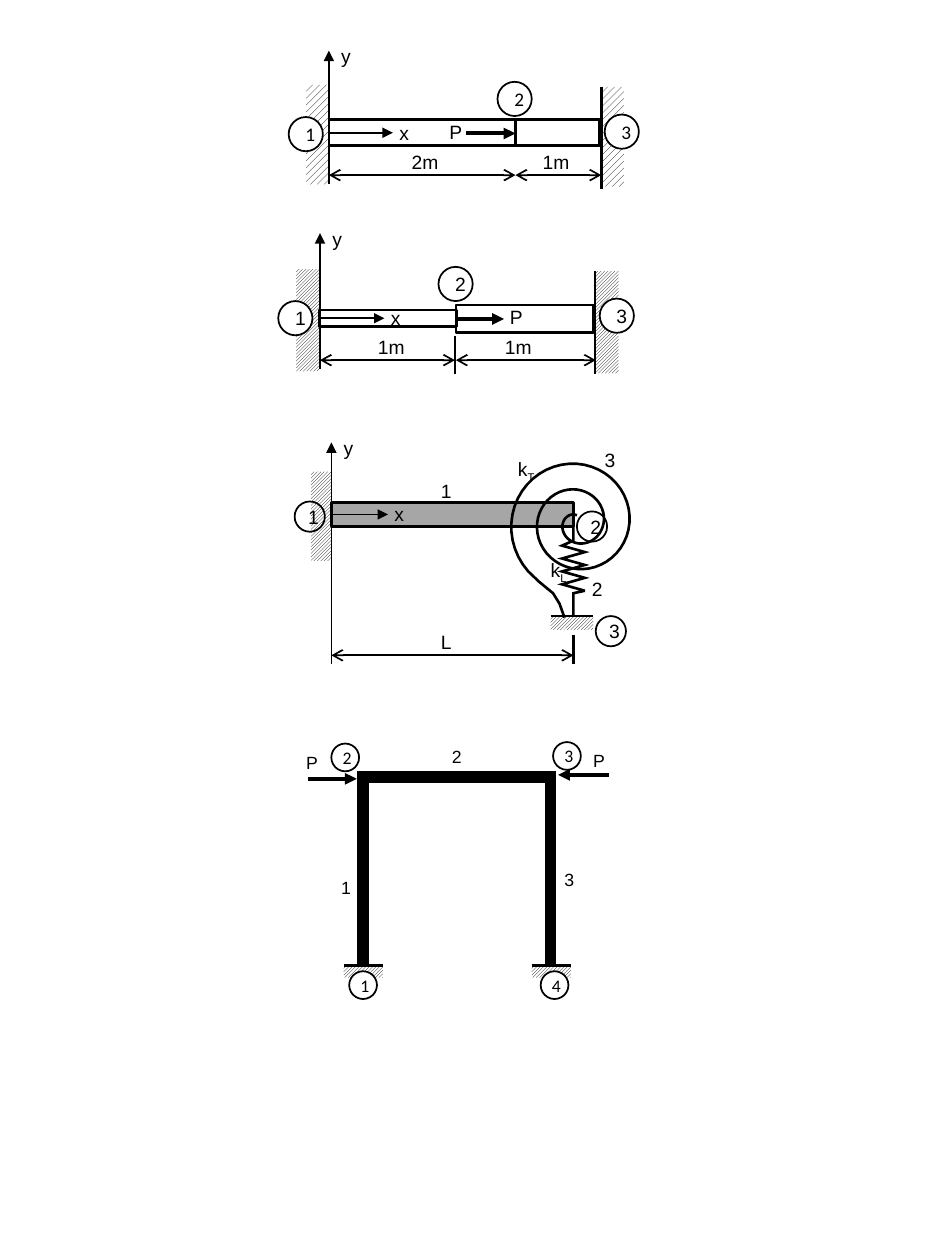
import math

from lxml import etree
from pptx import Presentation, util as u
from pptx.dml.color import RGBColor
from pptx.enum import dml, shapes as kinds, text
from pptx.oxml import ns

BLACK = RGBColor(0, 0, 0)
WHITE = RGBColor(255, 255, 255)
GRAY = RGBColor(166, 166, 166)
WIDE = dml.MSO_PATTERN.WIDE_UPWARD_DIAGONAL
LIGHT = dml.MSO_PATTERN.LIGHT_UPWARD_DIAGONAL

LINE_ENDS = {
    "plain": {},
    "axis": {"headEnd": "triangle"},
    "force": {"tailEnd": "triangle"},
    "dimension": {"headEnd": "arrow", "tailEnd": "arrow"},
}
LABEL_WIDTHS = {"1m": 1.07, "2m": 1.07, "kT": 0.86, "kL": 0.86}

# Lengths are in centimetres.
# axis: x, top, bottom; wall: length and thickness of its hatch
# bars: left, top, width, height, end and weight of the arrow from the left side
# spans: start, end, label, left of label; grounds: left, top, width, height, weight
# lines: x1, y1, x2, y2, weight, style; labels: text, left, top; nodes: number, left, top, fill
FIGURES = [
    {
        "pattern": WIDE, "font": "Calibri", "size": 11, "diameter": 0.69,
        "axis": (6.63, 1.02, 3.71), "wall": (2.01, 0.46), "right_wall": (12.12, 1.75, 3.81, 1.5),
        "bars": [(6.63, 2.41, 5.46, 0.53, 7.92, 1)],
        "level": 3.53, "spans": [(6.63, 10.39, "2m", 8.05), (10.39, 12.12, "1m", 10.69)],
        "lines": [(9.4, 2.69, 10.39, 2.69, 2.25, "force"), (10.39, 2.41, 10.39, 2.94, 1.5, "plain")],
        "labels": [("P", 8.81, 2.31)],
        "nodes": [(1, 5.82, 2.36, WHITE), (3, 12.19, 2.31, WHITE), (2, 10.03, 1.65, None)],
    },
    {
        "pattern": LIGHT, "font": "Arial", "size": 11, "diameter": 0.69,
        "axis": (6.45, 4.7, 7.44), "wall": (2.06, 0.48), "right_wall": (11.99, 5.46, 7.54, 1),
        "bars": [(6.43, 6.25, 2.77, 0.33, 7.75, 1), (9.19, 6.15, 2.77, 0.56, 10.16, 2.25)],
        "level": 7.26, "spans": [(6.45, 9.17, "1m", 7.37), (9.19, 12.01, "1m", 9.93)],
        "lines": [(9.17, 6.78, 9.17, 7.54, 1, "plain")],
        "labels": [("P", 10.03, 6.02)],
        "nodes": [(1, 5.61, 6.07, WHITE), (3, 12.09, 6.02, WHITE), (2, 8.84, 5.38, None)],
    },
    {
        "pattern": LIGHT, "font": "Arial", "size": 11, "diameter": 0.61,
        "axis": (6.68, 8.92, 13.39), "wall": (1.8, 0.41), "bar_fill": GRAY,
        "bars": [(6.68, 10.13, 4.88, 0.48, 7.82, 1)],
        "level": 13.21, "spans": [(6.68, 11.56, "L", 8.64)],
        "grounds": [(11.1, 12.42, 0.86, 0.28, 1)],
        "lines": [(11.56, 12.8, 11.56, 13.39, 1.5, "plain")],
        "labels": [("kT", 10.19, 9.09), ("kL", 10.85, 11.13), ("1", 8.64, 9.53),
                   ("2", 11.68, 11.51), ("3", 11.94, 8.92)],
        "nodes": [(1, 5.94, 10.11, None), (3, 12.01, 12.42, None), (2, 11.63, 10.31, None)],
    },
    {
        "pattern": LIGHT, "font": "Calibri", "size": 10.1, "diameter": 0.56,
        "grounds": [(left, 19.46, 0.79, 0.25, 1.5) for left in (6.93, 10.72)],
        "lines": [(6.2, 15.7, 7.19, 15.7, 2.25, "force"), (12.27, 15.62, 11.25, 15.62, 2.25, "force")],
        "labels": [("1", 6.63, 17.55), ("2", 8.86, 14.91), ("3", 11.13, 17.4),
                   ("P", 5.92, 15.04), ("P", 11.71, 14.99)],
        "nodes": [(1, 7.04, 19.58, WHITE), (3, 11.15, 14.96, None), (2, 6.68, 14.99, None),
                  (4, 10.9, 19.58, WHITE)],
    },
]


def add_line(shapes, x1, y1, x2, y2, weight, style):
    line = shapes.add_connector(kinds.MSO_CONNECTOR.STRAIGHT, u.Cm(x1), u.Cm(y1), u.Cm(x2), u.Cm(y2))
    line.line.color.rgb = BLACK
    line.line.width = u.Pt(weight)
    for end, arrow in LINE_ENDS[style].items():
        etree.SubElement(line.line._get_or_add_ln(), ns.qn(f"a:{end}"), type=arrow)
    etree.SubElement(line._element.spPr, ns.qn("a:effectLst"))
    return line


def add_outline(shapes, points, weight):
    """Draw an open, unfilled path with mitred corners."""
    places = [(u.Cm(x), u.Cm(y)) for x, y in points]
    builder = shapes.build_freeform(*places[0])
    builder.add_line_segments(places[1:], close=False)
    shape = builder.convert_to_shape()
    shape.shadow.inherit = False
    shape.fill.background()
    shape.line.color.rgb = BLACK
    shape.line.width = u.Pt(weight)
    etree.SubElement(shape.line._get_or_add_ln(), ns.qn("a:miter"), lim="800000")


presentation = Presentation()
presentation.slide_width = u.Cm(19.05)
presentation.slide_height = u.Cm(25.4)
slide = presentation.slides.add_slide(presentation.slide_layouts[6])

groups = []
for figure in FIGURES:
    group = slide.shapes.add_group_shape()
    groups.append(group)
    shapes = group.shapes
    hatches = []
    lines = list(figure["lines"])
    labels = list(figure["labels"])
    bars = figure.get("bars", [])

    if "axis" in figure:
        x, top, bottom = figure["axis"]
        length, thickness = figure["wall"]
        arrow_end = bars[0][4]
        middle = bars[0][1] + bars[0][3] / 2
        hatches.append((x - (thickness + length) / 2, middle + 0.04 - thickness / 2, length, thickness, 90))
        lines.append((x, top, x, bottom, 1, "axis"))
        labels += [("y", x, top - 0.25), ("x", arrow_end - 0.12, middle - 0.36)]
    if "right_wall" in figure:
        x, top, bottom, weight = figure["right_wall"]
        hatches.append((x + (thickness - length) / 2, middle + 0.08 - thickness / 2, length, thickness, 270))
        lines.append((x, top, x, bottom, weight, "plain"))
    for start, end, label, left in figure.get("spans", []):
        level = figure["level"]
        lines.append((start, level, end, level, 1, "dimension"))
        labels.append((label, left, level - 0.62))
    for left, top, width, height, weight in figure.get("grounds", []):
        hatches.append((left, top, width, height, 0))
        lines.append((left, top, left + width, top, weight, "plain"))

    for left, top, width, height, rotation in hatches:
        hatch = shapes.add_shape(kinds.MSO_SHAPE.RECTANGLE, u.Cm(left), u.Cm(top), u.Cm(width), u.Cm(height))
        hatch.rotation = rotation
        hatch.shadow.inherit = False
        hatch.fill.patterned()
        hatch.fill.pattern = figure["pattern"]
        hatch.fill.fore_color.rgb = BLACK
        hatch.fill.back_color.rgb = WHITE
        hatch.line.fill.background()

    for left, top, width, height, arrow_end, weight in bars:
        bar = shapes.add_shape(kinds.MSO_SHAPE.RECTANGLE, u.Cm(left), u.Cm(top), u.Cm(width), u.Cm(height))
        bar.shadow.inherit = False
        bar.fill.background()
        if "bar_fill" in figure:
            bar.fill.solid()
            bar.fill.fore_color.rgb = figure["bar_fill"]
        bar.line.color.rgb = BLACK
        bar.line.width = u.Pt(1.5)
        middle = top + height / 2
        arrow = add_line(shapes, left, middle, arrow_end, middle, weight, "force")
        arrow.begin_connect(bar, 1)

    for line in lines:
        add_line(shapes, *line)

    for label, left, top in labels:
        box = shapes.add_textbox(u.Cm(left), u.Cm(top), u.Cm(LABEL_WIDTHS.get(label, 0.74)), u.Cm(0.74))
        box.text_frame.word_wrap = False
        box.text_frame.auto_size = text.MSO_AUTO_SIZE.SHAPE_TO_FIT_TEXT
        paragraph = box.text_frame.paragraphs[0]
        paragraph.font.name = "Arial"
        paragraph.font.size = u.Pt(figure["size"])
        paragraph.font.color.rgb = BLACK
        paragraph.add_run().text = label[0] if label.startswith("k") else label
        if label.startswith("k"):
            subscript = paragraph.add_run()
            subscript.text = label[1:]
            subscript.font._element.set("baseline", "-25000")

    for number, left, top, fill in figure["nodes"]:
        diameter = u.Cm(figure["diameter"])
        node = shapes.add_shape(kinds.MSO_SHAPE.OVAL, u.Cm(left), u.Cm(top), diameter, diameter)
        node.shadow.inherit = False
        node.fill.background()
        if fill is not None:
            node.fill.solid()
            node.fill.fore_color.rgb = fill
        node.line.color.rgb = BLACK
        node.line.width = u.Pt(1)
        node.text_frame.vertical_anchor = text.MSO_ANCHOR.MIDDLE
        paragraph = node.text_frame.paragraphs[0]
        paragraph.text = str(number)
        paragraph.alignment = text.PP_ALIGN.CENTER
        paragraph.font.name = figure["font"]
        paragraph.font.size = u.Pt(figure["size"])
        paragraph.font.color.rgb = BLACK

# The torsion spring is a spiral whose radius grows evenly, with a tail down to the ground
torsion_spring = []
for step in range(115):
    angle = math.radians(90 + step * 7.5)
    radius = 0.15 + 0.01 * step * 13 / 12
    torsion_spring.append((11.63 + radius * math.cos(angle), 10.54 - radius * math.sin(angle)))
torsion_spring += [(10.87, 11.73), (11.15, 11.96), (11.28, 12.17), (11.38, 12.45)]
add_outline(groups[2].shapes, torsion_spring, 1.5)

zigzag = [(11.79 if turn % 2 else 11.33, 11 + 0.13 * turn) for turn in range(8)]
linear_spring = [(11.56, 10.44), (11.56, 10.9), *zigzag, (11.56, 11.96), (11.56, 12.42)]
add_outline(groups[2].shapes, linear_spring, 1.5)

portal_frame = [(7.32, 19.46), (7.32, 15.67), (11.1, 15.67), (11.1, 19.46)]
add_outline(groups[3].shapes, portal_frame, 6.75)

presentation.save("out.pptx")
